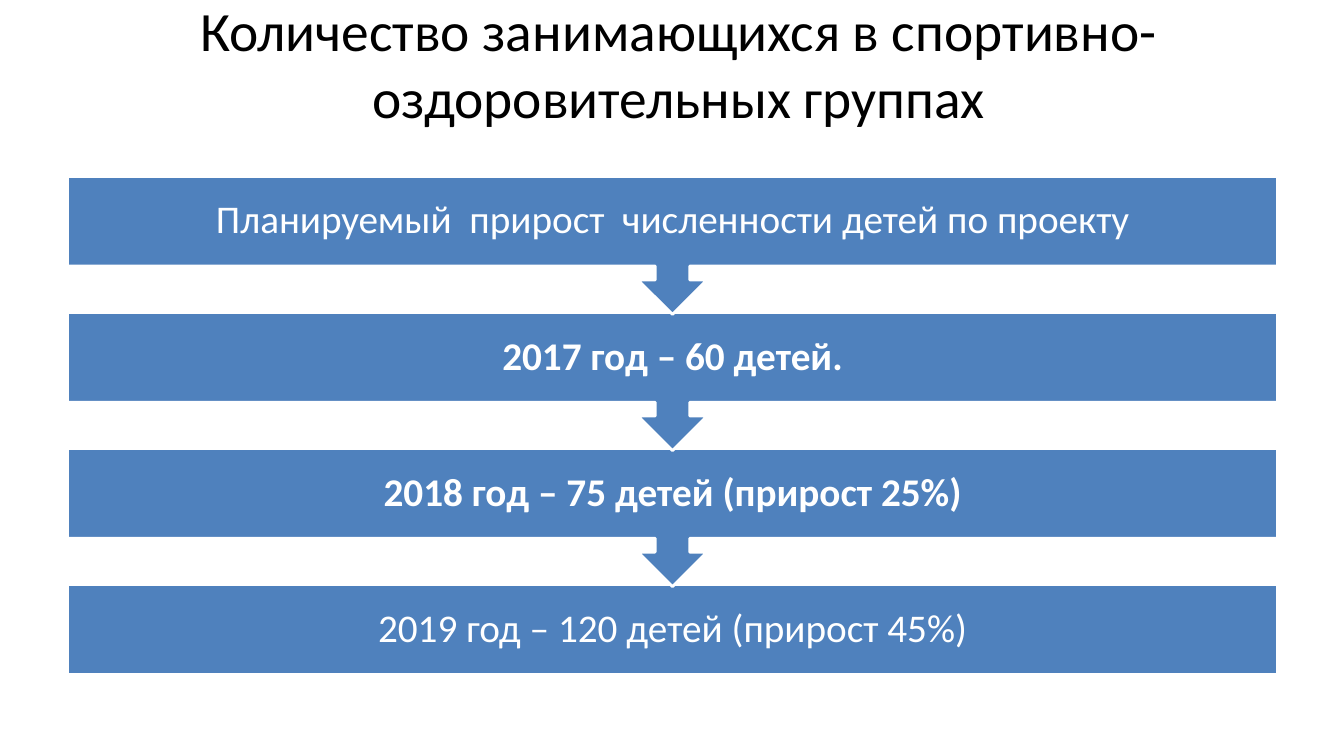
"""Build a slide with the planned growth of children in sports and health groups."""
from pptx import Presentation
from pptx.dml.color import RGBColor
from pptx.enum.shapes import MSO_SHAPE
from pptx.enum.text import MSO_ANCHOR, MSO_AUTO_SIZE, PP_ALIGN
from pptx.util import Pt

PX = 9144
TITLE_ONLY = 5
RECTANGLE = MSO_SHAPE.RECTANGLE
ARROW_CALLOUT = MSO_SHAPE.DOWN_ARROW_CALLOUT
MIDDLE = MSO_ANCHOR.MIDDLE
CENTER = PP_ALIGN.CENTER
NO_AUTOFIT = MSO_AUTO_SIZE.NONE
COLORS = {"title": "000000", "step": "4F81BD", "white": "FFFFFF"}

STEP_LEFT, STEP_TOP, STEP_WIDTH, STEP_PITCH = 67, 175, 1200, 135
BAR_HEIGHT, CALLOUT_HEIGHT, STEP_INSET = 89, 137, 22
STEPS = [
    ("Планируемый  прирост  численности детей по проекту", False),
    ("2017 год – 60 детей.", True),
    ("2018 год – 75 детей (прирост 25%)", True),
    ("2019 год – 120 детей (прирост 45%)", False),
]


def write_text(shape, text, size, color, bold=False):
    text_frame = shape.text_frame
    text_frame.text = text
    text_frame.word_wrap = True
    text_frame.auto_size = NO_AUTOFIT
    text_frame.vertical_anchor = MIDDLE
    paragraph = text_frame.paragraphs[0]
    paragraph.alignment = CENTER
    font = paragraph.runs[0].font
    font.name = "Calibri"
    font.size = Pt(size)
    font.bold = bold
    font.color.rgb = RGBColor.from_string(COLORS[color])


presentation = Presentation()
presentation.slide_width = 1333 * PX
presentation.slide_height = 750 * PX
slide = presentation.slides.add_slide(presentation.slide_layouts[TITLE_ONLY])

title = slide.shapes.title
title.left, title.top, title.width, title.height = 73 * PX, 0, 1200 * PX, 125 * PX
write_text(title, "Количество занимающихся в спортивно-оздоровительных группах", 39.6, "title")

last = len(STEPS) - 1
for index, (text, bold) in reversed(list(enumerate(STEPS))):
    kind, height = (RECTANGLE, BAR_HEIGHT) if index == last else (ARROW_CALLOUT, CALLOUT_HEIGHT)
    top = STEP_TOP + index * STEP_PITCH
    step = slide.shapes.add_shape(kind, STEP_LEFT * PX, top * PX, STEP_WIDTH * PX, height * PX)
    step.shadow.inherit = False
    step.fill.solid()
    step.fill.fore_color.rgb = RGBColor.from_string(COLORS["step"])
    step.line.color.rgb = RGBColor.from_string(COLORS["white"])
    step.line.width = Pt(2)
    write_text(step, text, 28, "white", bold)
    frame = step.text_frame
    frame.margin_left = frame.margin_right = STEP_INSET * PX
    frame.margin_top = frame.margin_bottom = STEP_INSET * PX
    frame.paragraphs[0].line_spacing = 0.9

presentation.save("out.pptx")
